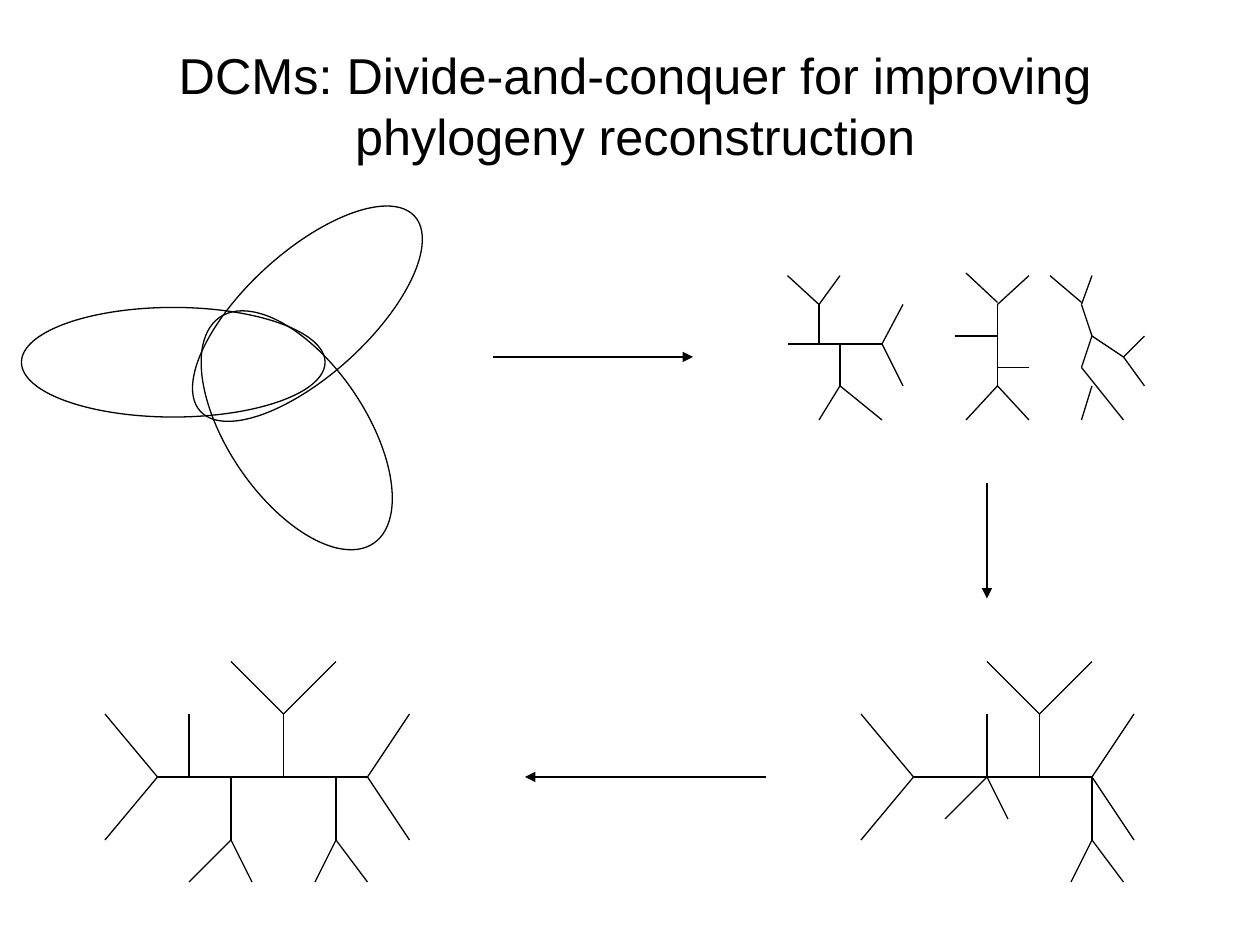
from lxml import etree
from pptx import Presentation, util as u
from pptx.dml.color import RGBColor
from pptx.enum import shapes, text
from pptx.oxml import ns

BLACK = RGBColor(0, 0, 0)
CELL = u.Inches(1) / 12
LINE_WIDTH = u.Pt(0.75)

ELLIPSES = [
    (2.04, 29.28, 28.92, 10.44, 0),
    (21.72, 27.96, 13.08, 26.04, 325.8),
    (23.4, 16.08, 11.76, 27.6, 47.7),
]

SUBTREES = [
    ((75, 32.75), [(84, 32.75)]),
    ((80, 32.75), [(80, 36.75)]),
    ((80, 36.75), [(78, 40), (84, 40)]),
    ((78, 32.75), [(78, 29)]),
    ((78, 29), [(75, 26.25), (80, 26.25)]),
    ((84, 32.75), [(86, 29), (86, 36.75)]),
    ((95, 29), [(95, 36.75), (98, 26.25)]),
    ((95, 36.75), [(92, 40), (98, 40)]),
    ((95, 35), [(98, 35)]),
    ((91, 32), [(95, 32)]),
    ((95, 28.8), [(92, 26)]),
    ((104, 32), [(103, 29), (107, 34), (103, 35)]),
    ((103, 35), [(107, 40)]),
    ((104, 36.75), [(103, 40)]),
    ((103, 29), [(104, 26.25)]),
    ((103, 28.8), [(100, 26.25)]),
    ((107, 34), [(109, 32), (109, 36.75)]),
]

COMMON_FORKS = [
    ((15, 74), [(10, 68), (10, 80)]),
    ((27, 74), [(27, 68)]),
    ((27, 68), [(22, 63), (32, 63)]),
    ((32, 74), [(32, 80)]),
    ((32, 80), [(35, 84), (30, 84)]),
]

RESOLVED_FORKS = [
    ((35, 74), [(15, 74), (39, 68), (39, 80)]),
    ((22, 74), [(22, 80)]),
    ((22, 80), [(18, 84), (24, 84)]),
    ((18, 74), [(18, 68)]),
]

MERGED_FORKS = [
    ((32, 74), [(15, 74), (36, 68), (36, 80)]),
    ((22, 74), [(18, 78), (24, 78), (22, 68)]),
]

ARROWS = [
    ((47, 34), (66, 34)),
    ((94, 46), (94, 57)),
    ((73, 74), (50, 74)),
]


def grid(*cells):
    """Convert grid cells to slide lengths."""
    return [u.Emu(round(cell * CELL)) for cell in cells]


def add_title(slide, wording):
    """Add the centred slide title."""
    frame = slide.shapes.add_textbox(*grid(9, 3, 103, 14)).text_frame
    frame.word_wrap = True
    frame.vertical_anchor = text.MSO_ANCHOR.MIDDLE
    paragraph = frame.paragraphs[0]
    paragraph.text = wording
    paragraph.alignment = text.PP_ALIGN.CENTER
    paragraph.font.name = "Arial"
    paragraph.font.size = u.Pt(28.8)
    paragraph.font.color.rgb = BLACK


def add_ellipses(slide, ellipses):
    """Add a group of overlapping outlined ellipses."""
    group = slide.shapes.add_group_shape()
    for *box, rotation in ellipses:
        shape = group.shapes.add_shape(shapes.MSO_SHAPE.OVAL, *grid(*box))
        shape.rotation = rotation
        shape.shadow.inherit = False
        shape.fill.background()
        shape.line.color.rgb = BLACK
        shape.line.width = LINE_WIDTH


def add_line(container, start, end):
    """Add a thin straight line between two grid points."""
    connector = container.shapes.add_connector(
        shapes.MSO_CONNECTOR.STRAIGHT, *grid(*start, *end))
    connector.line.color.rgb = BLACK
    connector.line.width = LINE_WIDTH
    etree.SubElement(connector._element.spPr, ns.qn("a:effectLst"))
    return connector


def add_arrow(slide, start, end):
    """Add a line with a triangular head at its end."""
    connector = add_line(slide, start, end)
    outline = connector.line._get_or_add_ln()
    etree.SubElement(outline, ns.qn("a:tailEnd"), type="triangle")


def add_tree(slide, forks, shift=0):
    """Add a group of branches, moved right by a number of columns."""
    group = slide.shapes.add_group_shape()
    for (column, row), tips in forks:
        for tip_column, tip_row in tips:
            add_line(group, (column + shift, row), (tip_column + shift, tip_row))


def main():
    """Build and save the slide."""
    presentation = Presentation()
    presentation.slide_width, presentation.slide_height = grid(120, 90)
    slide = presentation.slides.add_slide(presentation.slide_layouts[6])
    add_title(slide, "DCMs: Divide-and-conquer for improving phylogeny reconstruction")
    add_ellipses(slide, ELLIPSES)
    add_tree(slide, SUBTREES)
    add_tree(slide, COMMON_FORKS + RESOLVED_FORKS)
    add_tree(slide, COMMON_FORKS + MERGED_FORKS, shift=72)
    for start, end in ARROWS:
        add_arrow(slide, start, end)
    presentation.save("out.pptx")


if __name__ == "__main__":
    main()
